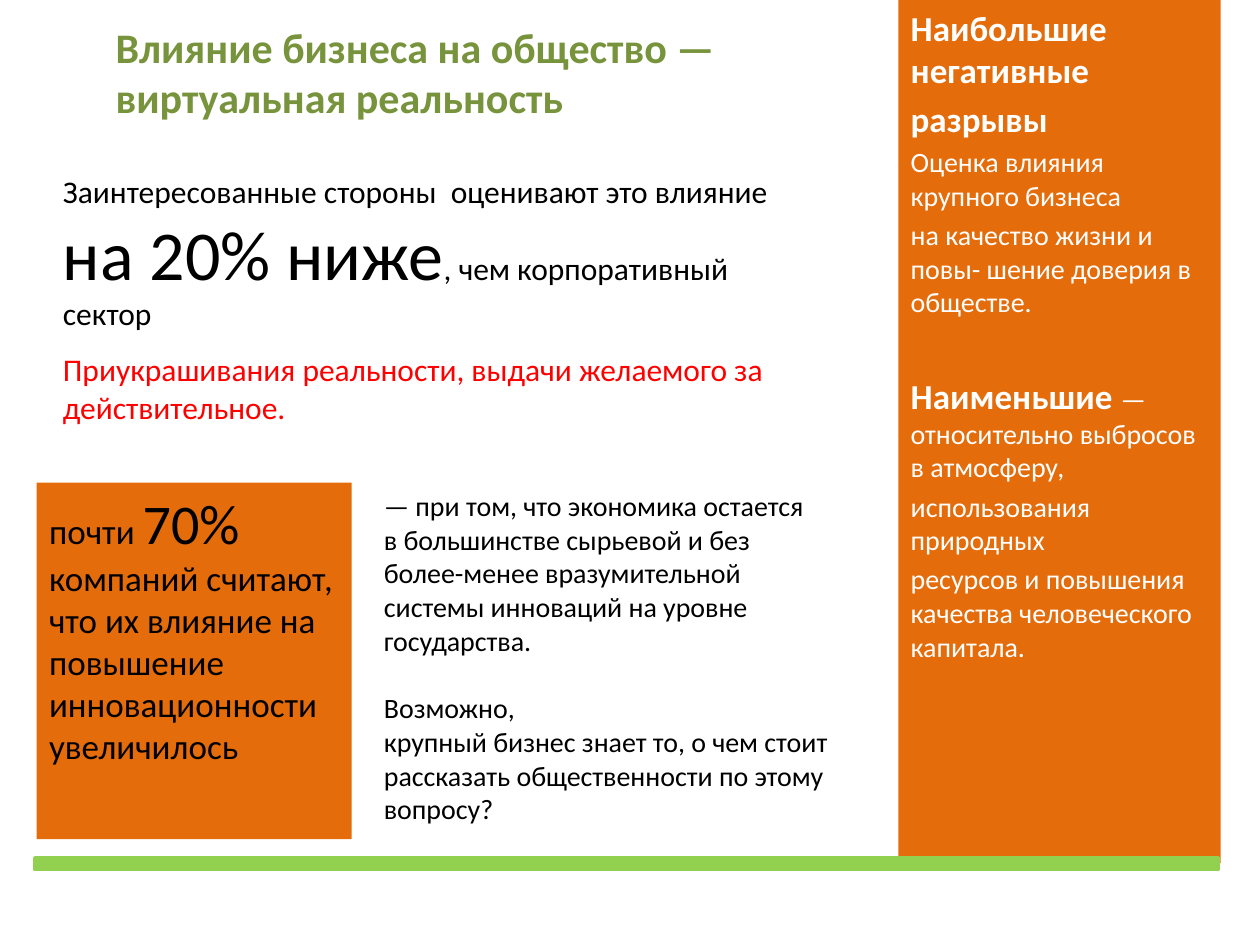
import pptx
import pptx.util
import pptx.dml.color
import pptx.enum.shapes
import pptx.enum.text

Cm = pptx.util.Cm
Pt = pptx.util.Pt
RGB = pptx.dml.color.RGBColor
ANCHOR = pptx.enum.text.MSO_ANCHOR

OLIVE = RGB(0x77, 0x93, 0x3C)
ORANGE = RGB(0xE4, 0x6C, 0x0A)
GREEN = RGB(0x92, 0xD0, 0x50)
RED = RGB(0xFF, 0, 0)
BLACK = RGB(0, 0, 0)
WHITE = RGB(0xFF, 0xFF, 0xFF)


def write(shape, paras, color, anchor=ANCHOR.TOP):
    """Fill a shape from (space before, [(text, size, bold), ...]) pairs."""
    frame = shape.text_frame
    frame.word_wrap = True
    frame.vertical_anchor = anchor
    for i, (gap, runs) in enumerate(paras):
        para = frame.paragraphs[0] if i == 0 else frame.add_paragraph()
        para.alignment = pptx.enum.text.PP_ALIGN.LEFT
        para.space_before = Pt(gap)
        for text, size, bold in runs:
            for n, line in enumerate(text.split("\n")):
                if n:
                    para.add_line_break()
                run = para.add_run()
                run.text = line
                style = {"name": "Calibri", "size": Pt(size), "bold": bold}
                for key, value in style.items():
                    setattr(run.font, key, value)
                run.font.color.rgb = color


def add_text(slide, box, paras, color, anchor=ANCHOR.TOP):
    shape = slide.shapes.add_textbox(*map(Cm, box))
    write(shape, paras, color, anchor)


def add_block(slide, box, fill):
    kind = pptx.enum.shapes.MSO_SHAPE.RECTANGLE
    shape = slide.shapes.add_shape(kind, *map(Cm, box))
    shape.shadow.inherit = False
    shape.fill.solid()
    shape.fill.fore_color.rgb = fill
    shape.line.fill.background()
    return shape


def add_head(slide, box):
    text = "Влияние бизнеса на общество —\nвиртуальная реальность"
    add_text(slide, box, [(0, [(text, 24, True)])], OLIVE, ANCHOR.MIDDLE)


def add_claim(slide, box):
    """Stakeholder rating with the red remark below it."""
    left, top, width, height = box
    rating = [
        ("Заинтересованные стороны  оценивают это влияние ", 18, False),
        ("на 20% ниже", 40, False),
        (", чем корпоративный сектор", 18, False),
    ]
    add_text(slide, (left, top, width, 2.52), [(0, rating)], BLACK)
    remark = ["Приукрашивания реальности, выдачи желаемого за", "действительное."]
    paras = [(0, [(line, 18, False)]) for line in remark]
    add_text(slide, (left, top + 3.58, 18.03, height - 3.58), paras, RED)


def add_side(slide, box):
    paras = [
        (0, [("Наибольшие негативные", 20, True)]),
        (4, [("разрывы", 20, True)]),
        (3.2, [("Оценка влияния крупного бизнеса", 16, False)]),
        (3.2, [("на качество жизни и повы- шение доверия в обществе.", 16, False)]),
        (32, [("Наименьшие ", 20, True),
              ("— относительно выбросов в атмосферу,", 16, False)]),
        (3.2, [("использования природных", 16, False)]),
        (3.2, [("ресурсов и повышения качества человеческого капитала.", 16, False)]),
    ]
    write(add_block(slide, box, ORANGE), paras, WHITE)


def add_fact(slide, box):
    """Orange share box with the comment to its right."""
    left, top, width, height = box
    share = [
        ("почти ", 20, False),
        ("70% ", 32, False),
        ("компаний считают, что их влияние на повышение "
         "инновационности увеличилось", 20, False),
    ]
    write(add_block(slide, (left, top, 6.35, height), ORANGE), [(0, share)], BLACK)
    notes = [
        (0, "— при том, что экономика остается"),
        (0, "в большинстве сырьевой и без"),
        (0, "более-менее вразумительной"),
        (0, "системы инноваций на уровне государства."),
        (19.5, "Возможно,"),
        (0, "крупный бизнес знает то, о чем стоит рассказать "
            "общественности по этому вопросу?"),
    ]
    paras = [(gap, [(text, 16, False)]) for gap, text in notes]
    add_text(slide, (left + 6.75, top, width - 6.75, height), paras, BLACK)


def add_bar(slide, box):
    bar = add_block(slide, box, GREEN)
    bar.line.color.rgb = GREEN
    bar.line.width = Pt(2)


def main():
    deck = pptx.Presentation()
    deck.slide_width, deck.slide_height = Cm(25.4), Cm(19.05)
    slide = deck.slides.add_slide(deck.slide_layouts[6])
    add_head(slide, (2.08, 0.76, 12.62, 1.37))
    add_claim(slide, (1.02, 3.35, 15.39, 5.38))
    add_side(slide, (18.11, 0, 6.5, 17.4))
    add_fact(slide, (0.74, 9.73, 16.76, 7.19))
    add_bar(slide, (0.71, 17.3, 23.85, 0.23))
    deck.save("out.pptx")


if __name__ == "__main__":
    main()
